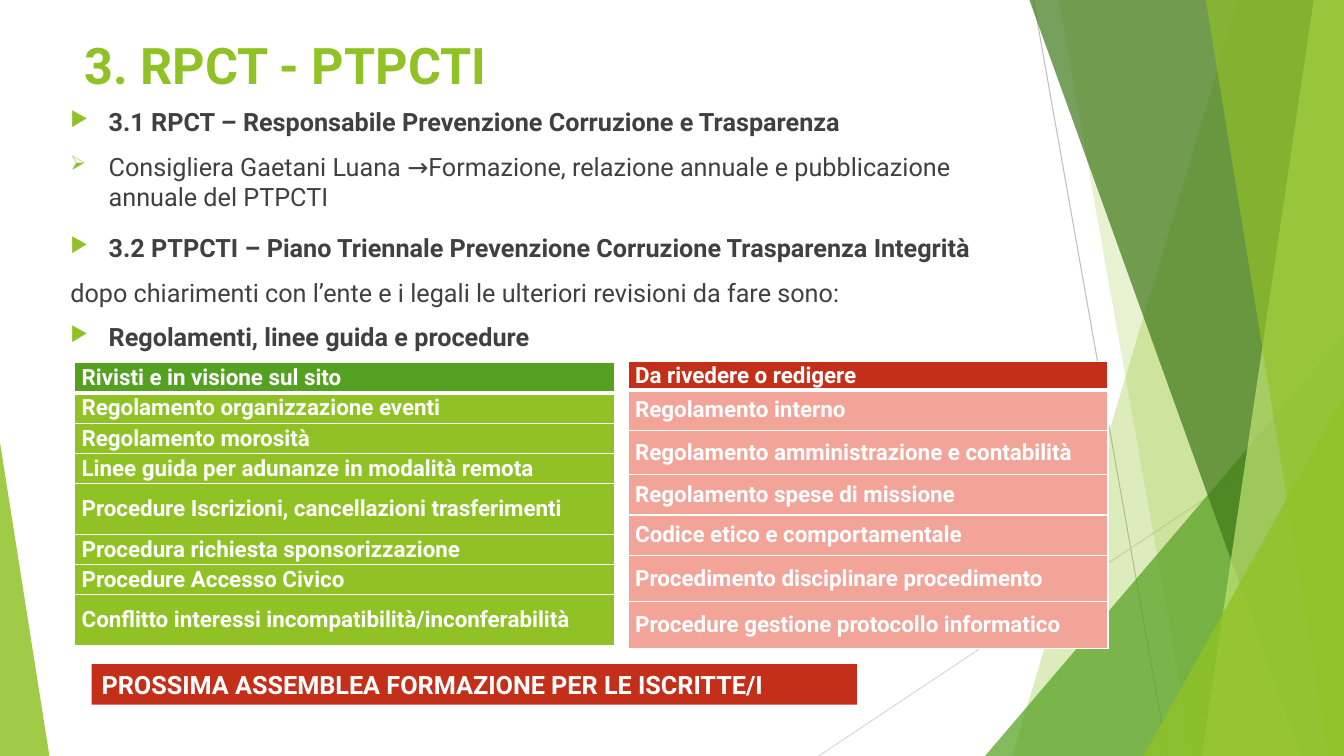
from dataclasses import dataclass
from typing import Any

from lxml.etree import SubElement
from pptx import Presentation
from pptx.dml.color import RGBColor
from pptx.enum.shapes import MSO_CONNECTOR, MSO_SHAPE
from pptx.enum.text import MSO_ANCHOR, PP_ALIGN
from pptx.oxml.ns import qn
from pptx.util import Inches, Pt

FONT = "Roboto"
COLORS = {
    "lime": "90C226", "green": "54A021", "dark_green": "3F7819", "pale_lime": "C0E474",
    "red": "C42F1A", "pink": "F2A499", "text": "404040", "white": "FFFFFF",
    "gray": "BFBFBF", "light_gray": "D9D9D9",
}
WIDTH, HEIGHT = 13.33, 7.5


@dataclass
class Line:
    start: tuple[float, float]
    end: tuple[float, float]
    color: str


@dataclass
class Facet:
    """Band reaching the right edge, from its top-left to its bottom-left corner."""
    top_left: float
    bottom_left: float
    color: str
    opacity: int


@dataclass
class Triangle:
    left: float
    top: float
    width: float
    apex: int
    color: str
    opacity: int


@dataclass
class Item:
    text: str
    bullet: str = ""
    bold: bool = True


@dataclass
class Listing:
    left: float
    top: float
    width: float
    header_color: str
    row_color: str
    rows: list[tuple[str, float]]


LINES = [
    Line((10.25, 0), (11.58, HEIGHT), "gray"),
    Line((WIDTH, 4.03), (8.12, HEIGHT), "light_gray"),
]
DECORATIONS = [
    Facet(12.28, 10.04, "lime", 30),
    Facet(10.5, 11.83, "lime", 20),
    Triangle(9.77, 3.33, 3.56, 1, "green", 72),
    Facet(10.21, 12.91, "dark_green", 70),
    Facet(13.03, 11.92, "pale_lime", 70),
    Facet(11.96, 13.18, "lime", 65),
    Triangle(11.34, 3.93, 1.99, 1, "lime", 80),
    Triangle(0, 4.39, 0.49, 0, "lime", 85),
]
BODIES = [
    (1.01, [
        Item("3.1 RPCT – Responsabile Prevenzione Corruzione e Trasparenza", "▶"),
        Item("Consigliera Gaetani Luana →Formazione, relazione annuale e pubblicazione "
             "annuale del PTPCTI", "➢", False),
    ]),
    (2.26, [
        Item("3.2 PTPCTI – Piano Triennale Prevenzione Corruzione Trasparenza Integrità", "▶"),
        Item("dopo chiarimenti con l’ente e i legali le ulteriori revisioni da fare sono:",
             bold=False),
        Item("Regolamenti, linee guida e procedure", "▶"),
    ]),
]
LISTINGS = [
    Listing(0.74, 3.6, 5.36, "green", "lime", [
        ("Rivisti e in visione sul sito", 0.3),
        ("Regolamento organizzazione eventi", 0.3),
        ("Regolamento morosità", 0.3),
        ("Linee guida per adunanze in modalità remota", 0.3),
        ("Procedure Iscrizioni, cancellazioni trasferimenti", 0.5),
        ("Procedura richiesta sponsorizzazione", 0.3),
        ("Procedure Accesso Civico", 0.3),
        ("Conflitto interessi incompatibilità/inconferabilità", 0.5),
    ]),
    Listing(6.23, 3.59, 4.76, "red", "pink", [
        ("Da rivedere o redigere", 0.28),
        ("Regolamento interno", 0.4),
        ("Regolamento amministrazione e contabilità", 0.44),
        ("Regolamento spese di missione", 0.4),
        ("Codice etico e comportamentale", 0.4),
        ("Procedimento disciplinare procedimento", 0.46),
        ("Procedure gestione protocollo informatico", 0.46),
    ]),
]


def rgb(name: str) -> RGBColor:
    return RGBColor.from_string(COLORS[name])


def write(paragraph: Any, text: str, *, size: float = 18, color: str = "text",
          bold: bool = True, align: PP_ALIGN = PP_ALIGN.LEFT, before: float = 0) -> None:
    paragraph.alignment = align
    paragraph.space_before = Pt(before)
    run = paragraph.add_run()
    run.text = text
    run.font.name, run.font.size, run.font.bold = FONT, Pt(size), bold
    run.font.color.rgb = rgb(color)


def add_bullet(paragraph: Any, character: str) -> None:
    properties = paragraph._p.get_or_add_pPr()
    properties.set("marL", str(Inches(0.38)))
    properties.set("indent", str(-Inches(0.38)))
    color = SubElement(properties, qn("a:buClr"))
    SubElement(color, qn("a:srgbClr"), val=COLORS["lime"])
    SubElement(properties, qn("a:buSzPct"), val="80000")
    SubElement(properties, qn("a:buChar"), char=character)


def paint(shape: Any, color: str, opacity: int = 100) -> None:
    shape.shadow.inherit = False
    shape.line.fill.background()
    shape.fill.solid()
    shape.fill.fore_color.rgb = rgb(color)
    if opacity < 100:
        color_element = shape._element.spPr.find(qn("a:solidFill"))[0]
        SubElement(color_element, qn("a:alpha"), val=str(opacity * 1000))


def add_line(slide: Any, line: Line) -> None:
    points = [Inches(value) for value in (*line.start, *line.end)]
    connector = slide.shapes.add_connector(MSO_CONNECTOR.STRAIGHT, *points)
    connector.line.color.rgb = rgb(line.color)
    connector.line.width = Pt(0.75)
    SubElement(connector._element.spPr, qn("a:effectLst"))


def add_decoration(slide: Any, part: Facet | Triangle) -> None:
    if isinstance(part, Triangle):
        shape = slide.shapes.add_shape(
            MSO_SHAPE.ISOSCELES_TRIANGLE, Inches(part.left), Inches(part.top),
            Inches(part.width), Inches(HEIGHT - part.top))
        shape.adjustments[0] = part.apex
    else:
        builder = slide.shapes.build_freeform(Inches(part.top_left), 0)
        corners = [(WIDTH, 0), (WIDTH, HEIGHT), (part.bottom_left, HEIGHT)]
        builder.add_line_segments([(Inches(x), Inches(y)) for x, y in corners])
        shape = builder.convert_to_shape()
    paint(shape, part.color, part.opacity)


def add_text_frame(slide: Any, left: float, top: float, height: float) -> Any:
    box = slide.shapes.add_textbox(Inches(left), Inches(top), Inches(9.4), Inches(height))
    box.text_frame.word_wrap = True
    return box.text_frame


def add_body(slide: Any, top: float, items: list[Item]) -> None:
    frame = add_text_frame(slide, 0.6, top, 1.25)
    for index, item in enumerate(items):
        paragraph = frame.add_paragraph() if index else frame.paragraphs[0]
        if item.bullet:
            add_bullet(paragraph, item.bullet)
        write(paragraph, item.text, bold=item.bold, before=10 if index else 0)


def add_borders(cell: Any, top: float, bottom: float) -> None:
    properties = cell._tc.get_or_add_tcPr()
    for side, width in (("L", 1), ("R", 1), ("T", top), ("B", bottom)):
        border = SubElement(properties, qn(f"a:ln{side}"), w=str(Pt(width)))
        fill = SubElement(border, qn("a:solidFill"))
        SubElement(fill, qn("a:srgbClr"), val=COLORS["white"])


def add_listing(slide: Any, listing: Listing) -> None:
    height = sum(row_height for _, row_height in listing.rows)
    table = slide.shapes.add_table(
        len(listing.rows), 1, Inches(listing.left), Inches(listing.top),
        Inches(listing.width), Inches(height)).table
    table.first_row = table.horz_banding = False
    for index, (text, row_height) in enumerate(listing.rows):
        table.rows[index].height = Inches(row_height)
        cell = table.cell(index, 0)
        add_borders(cell, 3 if index == 1 else 1, 1 if index else 3)
        cell.fill.solid()
        cell.fill.fore_color.rgb = rgb(listing.row_color if index else listing.header_color)
        cell.margin_left = cell.margin_right = Inches(0.07)
        cell.margin_top = cell.margin_bottom = 0
        cell.vertical_anchor = MSO_ANCHOR.MIDDLE
        write(cell.text_frame.paragraphs[0], text, size=16, color="white",
              align=PP_ALIGN.JUSTIFY)


def main() -> None:
    presentation = Presentation()
    presentation.slide_width, presentation.slide_height = Inches(WIDTH), Inches(HEIGHT)
    slide = presentation.slides.add_slide(presentation.slide_layouts[6])
    for line in LINES:
        add_line(slide, line)
    for part in DECORATIONS:
        add_decoration(slide, part)
    title = add_text_frame(slide, 0.74, 0.29, 1.44)
    write(title.paragraphs[0], "3. RPCT - PTPCTI", size=36, color="lime")
    for top, items in BODIES:
        add_body(slide, top, items)
    for listing in LISTINGS:
        add_listing(slide, listing)
    banner = slide.shapes.add_shape(
        MSO_SHAPE.RECTANGLE, Inches(0.91), Inches(6.59), Inches(7.59), Inches(0.4))
    paint(banner, "red")
    write(banner.text_frame.paragraphs[0],
          "PROSSIMA ASSEMBLEA FORMAZIONE PER LE ISCRITTE/I", color="white")
    presentation.save("out.pptx")


if __name__ == "__main__":
    main()
